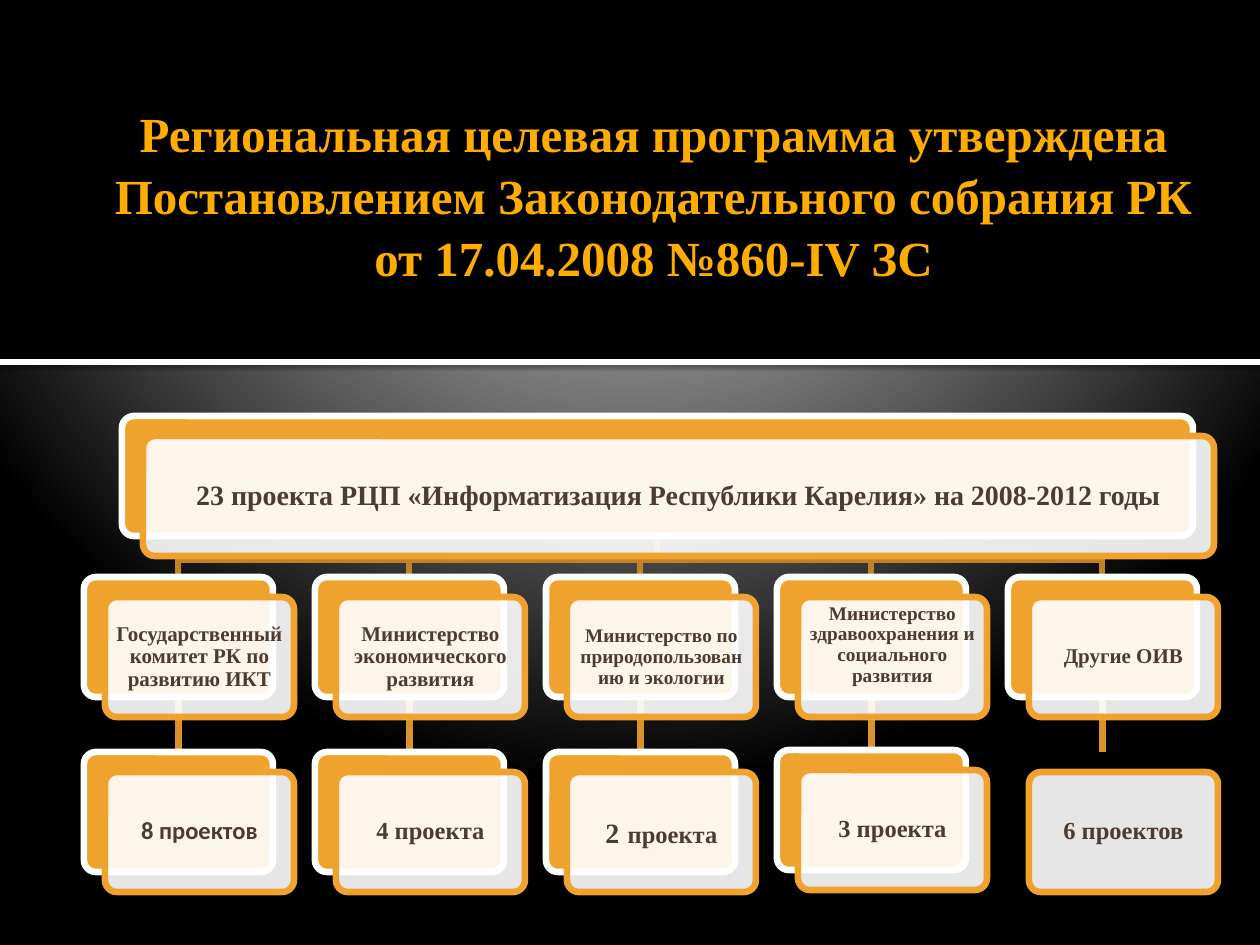
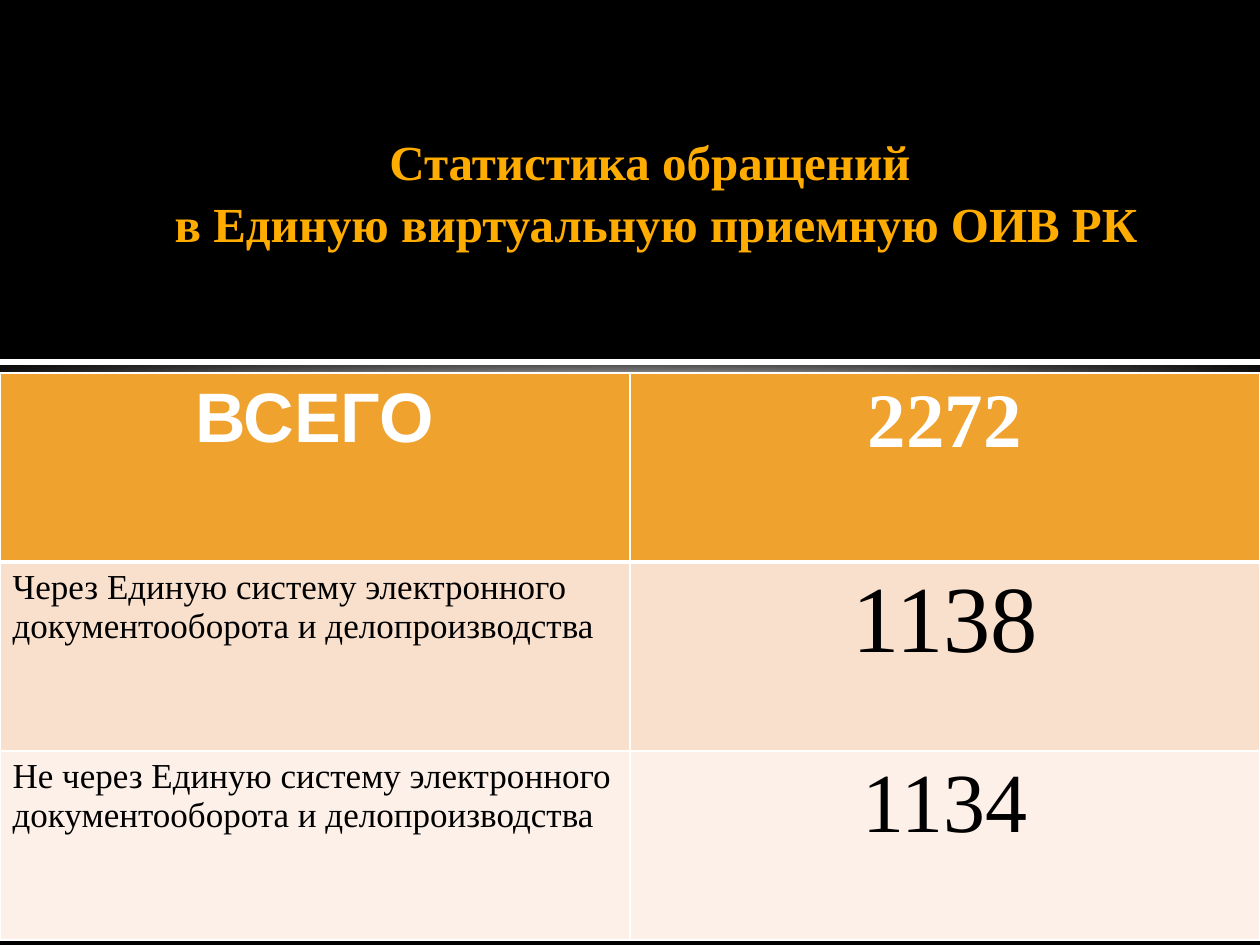
from dataclasses import dataclass

from lxml.etree import SubElement
from pptx import Presentation
from pptx.dml.color import RGBColor
from pptx.enum.shapes import MSO_CONNECTOR, MSO_SHAPE
from pptx.enum.text import MSO_ANCHOR, MSO_AUTO_SIZE, PP_ALIGN
from pptx.oxml import parse_xml
from pptx.oxml.ns import nsdecls, qn
from pptx.util import Emu, Pt

EMU_PER_PX = 914400 / 126
COLORS = {
    "black": "000000",
    "white": "FFFFFF",
    "title": "FFAC00",
    "orange": "F0A22E",
    "branch": "C08225",
    "stem": "DA932A",
    "card_text": "4E3B30",
    "row_dark": "F9E0CD",
    "row_light": "FCF0E8",
}
GLOW = [(0, "C0C0C0"), (12, "C0C0C0"), (20, "BEBEBE"), (100, "000000")]
SERIF = "Times New Roman"
SANS = "Calibri"
OUTLINE = Pt(3.78)

CARD_WIDTH, CARD_HEIGHT = 189, 120
SHIFT_X, SHIFT_Y = 21, 20
FIRST_LEFT, COLUMN_STEP = 84, 231
OFFICE_TOP, COUNT_TOP = 577, 752
ROOT_LEFT, ROOT_TOP, ROOT_WIDTH = 122, 416, 1071
BRANCH_Y = 560


@dataclass(frozen=True)
class Span:
    text: str
    size: int
    font: str = SERIF


@dataclass(frozen=True)
class Card:
    left: int
    top: int
    spans: tuple[Span, ...]
    width: int = CARD_WIDTH
    padding: int = 6
    lift: int = 0
    has_back: bool = True


@dataclass(frozen=True)
class Office:
    name: Span
    count: tuple[Span, ...]
    name_lift: int = 0
    count_rise: int = 0
    count_has_back: bool = True


@dataclass(frozen=True)
class Title:
    text: str
    frame: tuple[int, int, int, int]
    indent: int


@dataclass(frozen=True)
class CellText:
    text: str
    size: int
    font: str = SERIF
    align: PP_ALIGN = PP_ALIGN.CENTER


@dataclass(frozen=True)
class Row:
    label: CellText
    value: CellText
    fill: str
    color: str = "black"
    bold: bool = False


PROGRAM_TITLE = Title(
    "Региональная целевая программа утверждена Постановлением "
    "Законодательного собрания РК от 17.04.2008 №860-IV ЗС",
    (39, 108, 1191, 178), 38)
STATISTICS_TITLE = Title(
    "Статистика обращений \vв Единую виртуальную приемную ОИВ РК",
    (64, 45, 1171, 207), 13)

ROOT = Card(
    ROOT_LEFT, ROOT_TOP,
    (Span("23 проекта РЦП «Информатизация Республики Карелия» на 2008-2012 годы", 16),),
    ROOT_WIDTH, padding=9)
OFFICES = [
    Office(Span("Государственный комитет РК по развитию ИКТ", 12),
           (Span("8 проектов", 14, SANS),)),
    Office(Span("Министерство экономического развития", 12),
           (Span("4 проекта", 14),)),
    Office(Span("Министерство по природопользованию и экологии", 11),
           (Span("2", 16), Span(" ", 21, SANS), Span("проекта", 14))),
    Office(Span("Министерство здравоохранения и социального развития", 11),
           (Span("3 проекта", 14),), name_lift=6, count_rise=2),
    Office(Span("Другие ОИВ", 12), (Span("6 проектов", 14),), count_has_back=False),
]
STATISTICS = [
    Row(CellText("ВСЕГО", 40, "Arial"), CellText("2272", 44), "orange", "white", True),
    Row(CellText("Через Единую систему электронного документооборота и делопроизводства",
                 20, align=PP_ALIGN.LEFT), CellText("1138", 54), "row_dark"),
    Row(CellText("Не через Единую систему электронного документооборота и делопроизводства",
                 20, align=PP_ALIGN.LEFT), CellText("1134", 48), "row_light"),
]


def px(length: int) -> Emu:
    return Emu(round(length * EMU_PER_PX))


def rgb(name: str) -> RGBColor:
    return RGBColor.from_string(COLORS[name])


def paint(shape, fill: str, line: str | None = None) -> None:
    shape.shadow.inherit = False
    shape.fill.solid()
    shape.fill.fore_color.rgb = rgb(fill)
    if line:
        shape.line.color.rgb = rgb(line)
        shape.line.width = OUTLINE
    else:
        shape.line.fill.background()


def set_background(master) -> None:
    master.background.fill.gradient()
    gradient = next(master.element.iter(qn("a:gradFill")))
    stops = "".join(f'<a:gs pos="{place * 1000}"><a:srgbClr val="{color}"/></a:gs>'
                    for place, color in GLOW)
    gradient.getparent().replace(gradient, parse_xml(
        f'<a:gradFill {nsdecls("a")} rotWithShape="1"><a:gsLst>{stops}</a:gsLst>'
        '<a:path path="circle"><a:fillToRect l="10000" t="-25000" r="10000" b="125000"/>'
        '</a:path></a:gradFill>'))


def add_bands(page) -> None:
    """Draw the title bands and hand them to the layout, behind every title."""
    bands = []
    for top, height, fill in ((0, 359, "black"), (359, 6, "white")):
        band = page.shapes.add_shape(MSO_SHAPE.RECTANGLE, 0, px(top), px(1260), px(height))
        paint(band, fill)
        bands.append(band)
    effects = next(bands[-1].element.iter(qn("a:effectLst")))
    shadow = SubElement(effects, qn("a:outerShdw"), blurRad=str(Pt(2.5)),
                        dist=str(Pt(0.8)), dir="5400000", rotWithShape="0")
    tint = SubElement(shadow, qn("a:srgbClr"), val=COLORS["black"])
    SubElement(tint, qn("a:alpha"), val="60000")
    for band in bands:
        page.slide_layout.shapes.element.append(band.element)


def set_title(page, title: Title) -> None:
    box = page.shapes.title
    box.left, box.top, box.width, box.height = map(px, title.frame)
    frame = box.text_frame
    frame.word_wrap = True
    frame.auto_size = MSO_AUTO_SIZE.NONE
    frame.vertical_anchor = MSO_ANCHOR.BOTTOM
    frame.margin_left = frame.margin_right = px(13)
    frame.margin_top = frame.margin_bottom = 0
    frame.text = title.text
    para = frame.paragraphs[0]
    para.alignment = PP_ALIGN.CENTER
    para.line_spacing = 1.05
    para.font.name, para.font.size, para.font.bold = SERIF, Pt(28), True
    para.font.color.rgb = rgb("title")
    properties = next(box.element.iter(qn("a:pPr")))
    properties.set("marL", str(px(title.indent)))
    properties.set("indent", "0")


def add_plate(page, left: int, top: int, width: int, fill: str, line: str):
    plate = page.shapes.add_shape(MSO_SHAPE.ROUNDED_RECTANGLE, px(left), px(top),
                                  px(width), px(CARD_HEIGHT))
    plate.adjustments[0] = 0.1
    paint(plate, fill, line)
    return plate


def add_card(page, card: Card):
    """Draw a card and return its back plate, if it has one."""
    back = None
    if card.has_back:
        back = add_plate(page, card.left, card.top, card.width, "orange", "white")
    front = add_plate(page, card.left + SHIFT_X, card.top + SHIFT_Y, card.width,
                      "white", "orange")
    SubElement(next(front.element.iter(qn("a:srgbClr"))), qn("a:alpha"), val="90000")
    frame = front.text_frame
    frame.word_wrap = True
    frame.vertical_anchor = MSO_ANCHOR.MIDDLE
    frame.margin_left = frame.margin_right = px(card.padding)
    frame.margin_top = px(card.padding - card.lift)
    frame.margin_bottom = px(card.padding + 3 * card.lift)
    para = frame.paragraphs[0]
    para.alignment = PP_ALIGN.CENTER
    para.line_spacing = 0.9
    para.font.bold = True
    para.font.color.rgb = rgb("card_text")
    for span in card.spans:
        run = para.add_run()
        run.text = span.text
        run.font.name, run.font.size = span.font, Pt(span.size)
        run.font.bold = True
        run.font.color.rgb = rgb("card_text")
    return back


def add_branch(page, center: int) -> None:
    root_center = ROOT_LEFT + ROOT_WIDTH // 2
    builder = page.shapes.build_freeform(root_center, ROOT_TOP + CARD_HEIGHT, EMU_PER_PX)
    builder.add_line_segments(
        [(root_center, BRANCH_Y), (center, BRANCH_Y), (center, OFFICE_TOP)], close=False)
    branch = builder.convert_to_shape()
    branch.shadow.inherit = False
    branch.fill.background()
    branch.line.color.rgb = rgb("branch")
    branch.line.width = OUTLINE


def add_stem(page, center: int, upper, lower) -> None:
    """Join two back plates with a line that lies behind all cards."""
    stem = page.shapes.add_connector(MSO_CONNECTOR.STRAIGHT, px(center),
                                     px(OFFICE_TOP + CARD_HEIGHT), px(center), px(COUNT_TOP))
    if lower is None:
        stem.end_x = upper.left + upper.width // 2
    else:
        stem.end_connect(lower, 0)
    stem.begin_connect(upper, 2)
    stem.line.color.rgb = rgb("stem")
    stem.line.width = OUTLINE
    SubElement(next(stem.element.iter(qn("p:spPr"))), qn("a:effectLst"))
    page.shapes.element.insert(2, stem.element)


def add_program_chart(page) -> None:
    lefts = [FIRST_LEFT + COLUMN_STEP * column for column in range(len(OFFICES))]
    for left in reversed(lefts):
        add_branch(page, left + CARD_WIDTH // 2)
    add_card(page, ROOT)
    for left, office in zip(lefts, OFFICES):
        upper = add_card(page, Card(left, OFFICE_TOP, (office.name,), lift=office.name_lift))
        lower = add_card(page, Card(left, COUNT_TOP - office.count_rise, office.count,
                                    padding=8, has_back=office.count_has_back))
        add_stem(page, left + CARD_WIDTH // 2, upper, lower)


def set_borders(cell_properties, bottom_width: int) -> None:
    widths = {"lnL": 1, "lnR": 1, "lnT": 1, "lnB": bottom_width}
    for place, (side, width) in enumerate(widths.items()):
        cell_properties.insert(place, parse_xml(
            f'<a:{side} {nsdecls("a")} w="{Pt(width)}"><a:solidFill>'
            f'<a:srgbClr val="{COLORS["white"]}"/></a:solidFill></a:{side}>'))


def add_statistics_table(page) -> None:
    row_height = 189
    holder = page.shapes.add_table(len(STATISTICS), 2, 0, px(373), px(1260),
                                   px(row_height * len(STATISTICS)))
    for row_index, row in enumerate(STATISTICS):
        for column, content in enumerate((row.label, row.value)):
            cell = holder.table.cell(row_index, column)
            cell.fill.solid()
            cell.fill.fore_color.rgb = rgb(row.fill)
            cell.text = content.text
            para = cell.text_frame.paragraphs[0]
            para.alignment = content.align
            para.font.name, para.font.size = content.font, Pt(content.size)
            para.font.bold = row.bold
            para.font.color.rgb = rgb(row.color)
    for index, properties in enumerate(holder.element.iter(qn("a:tcPr"))):
        set_borders(properties, 3 if index < 2 else 1)


def main() -> None:
    deck = Presentation()
    deck.slide_width, deck.slide_height = px(1260), px(945)
    set_background(deck.slide_master)
    layout = deck.slide_layouts.get_by_name("Title Only")
    program_page = deck.slides.add_slide(layout)
    add_bands(program_page)
    set_title(program_page, PROGRAM_TITLE)
    add_program_chart(program_page)
    statistics_page = deck.slides.add_slide(layout)
    set_title(statistics_page, STATISTICS_TITLE)
    add_statistics_table(statistics_page)
    deck.save("out.pptx")


if __name__ == "__main__":
    main()
